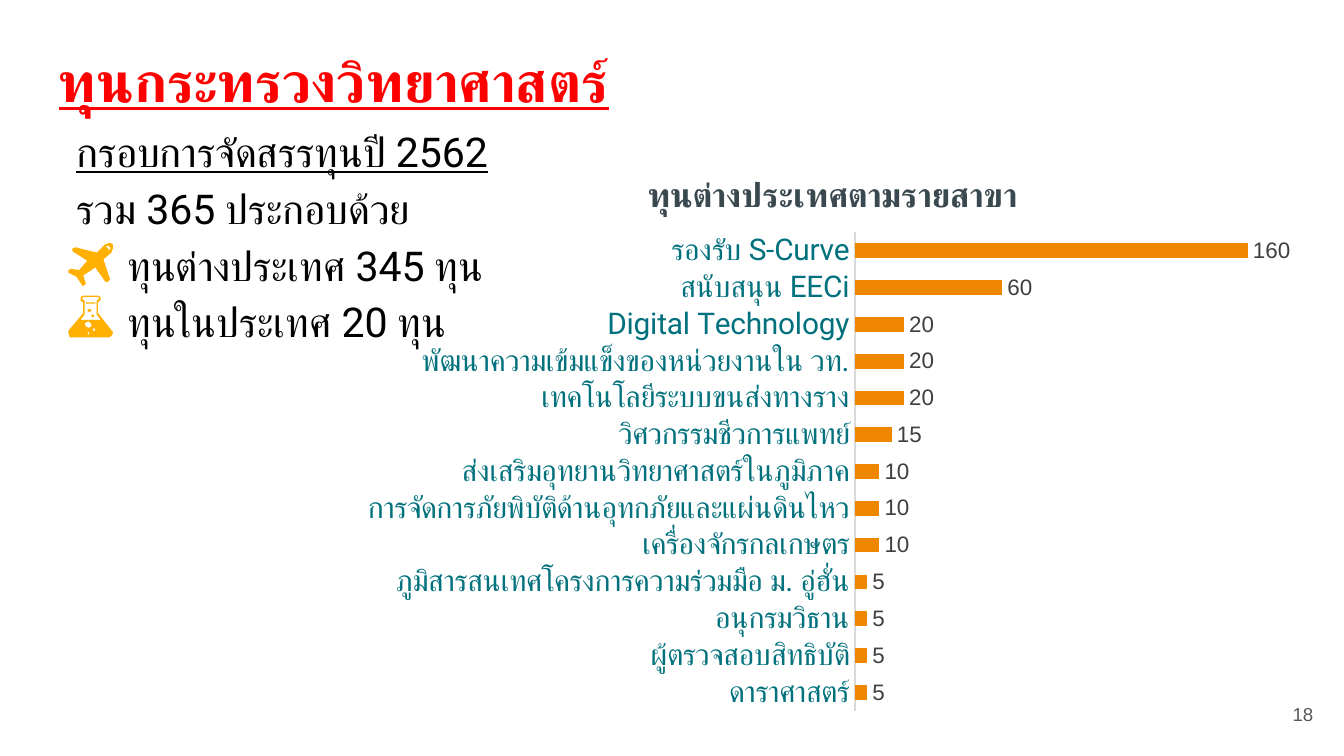
from pptx import Presentation
from pptx.util import Inches, Pt
from pptx.dml.color import RGBColor
from pptx.chart.data import CategoryChartData
from pptx.enum.chart import XL_CHART_TYPE as Kind, XL_LABEL_POSITION as Spot, XL_TICK_MARK as Tick
from pptx.enum.shapes import MSO_SHAPE as Preset
from pptx.enum.text import MSO_ANCHOR as Anchor, PP_ALIGN as Align
from pptx.oxml import parse_xml
from lxml import etree

DRAW = "http://schemas.openxmlformats.org/drawingml/2006/main"
GOLD = "FFB000"


def style(font, size, color, name="Roboto", bold=False):
    font.size, font.bold, font.name = Pt(size), bold, name
    font.color.rgb = RGBColor.from_string(color)
    etree.SubElement(font._rPr, f"{{{DRAW}}}cs", typeface=name)


def paint(shape, color):
    shape.shadow.inherit = False
    shape.fill.solid()
    shape.fill.fore_color.rgb = RGBColor.from_string(color)
    shape.line.fill.background()


prs = Presentation()
prs.slide_width = Inches(10)
prs.slide_height = prs.slide_width * 9 // 16
slide = prs.slides.add_slide(prs.slide_layouts[6])
shapes = slide.shapes

boxes = []
for x, y, w, h in [(0.34, 0.25, 9.32, 0.63), (0.34, 0.79, 9.32, 3.74), (9.27, 5.1, 0.6, 0.43)]:
    frame = shapes.add_textbox(Inches(x), Inches(y), Inches(w), Inches(h)).text_frame
    frame.word_wrap = True
    frame.margin_left = frame.margin_right = frame.margin_top = frame.margin_bottom = Inches(0.1)
    boxes.append(frame)
title, body, page = boxes

head = title.paragraphs[0]
head.text = "ทุนกระทรวงวิทยาศาสตร์"
style(head.font, 30, "FF0000", bold=True)
head.font.underline = True

lines = [
    ("กรอบการจัดสรรทุนปี 2562", 0.13),
    ("รวม 365 ประกอบด้วย", 0.13),
    ("ทุนต่างประเทศ 345 ทุน", 0.51),
    ("ทุนในประเทศ 20 ทุน", 0.51),
]
for i, (text, left) in enumerate(lines):
    para = body.add_paragraph() if i else body.paragraphs[0]
    para.text = text
    para.line_spacing = 1.15
    para._p.get_or_add_pPr().set("marL", str(Inches(left)))
    style(para.font, 22, "000000")
    para.font.underline = i == 0

page.vertical_anchor = Anchor.MIDDLE
num = page.paragraphs[0]
num.text = "18"
num.alignment = Align.RIGHT
style(num.font, 10, "595959", "Arial")

fields = [
    ("ดาราศาสตร์", 5),
    ("ผู้ตรวจสอบสิทธิบัติ", 5),
    ("อนุกรมวิธาน", 5),
    ("ภูมิสารสนเทศโครงการความร่วมมือ ม. อู่ฮั่น", 5),
    ("เครื่องจักรกลเกษตร", 10),
    ("การจัดการภัยพิบัติด้านอุทกภัยและแผ่นดินไหว", 10),
    ("ส่งเสริมอุทยานวิทยาศาสตร์ในภูมิภาค", 10),
    ("วิศวกรรมชีวการแพทย์", 15),
    ("เทคโนโลยีระบบขนส่งทางราง", 20),
    ("พัฒนาความเข้มแข็งของหน่วยงานใน วท.", 20),
    ("Digital Technology", 20),
    ("สนับสนุน EECi", 60),
    ("รองรับ S-Curve", 160),
]
data = CategoryChartData()
data.categories = [name for name, count in fields]
data.add_series("Series 1", [count for name, count in fields])
wide, high = 7.21, 4.28
chart = shapes.add_chart(
    Kind.BAR_CLUSTERED, Inches(2.59), Inches(1.1), Inches(wide), Inches(high), data
).chart
style(chart.font, 10, "000000", "Arial")
chart.has_legend = False
chart.has_title = True
label = chart.chart_title.text_frame.paragraphs[0]
label.text = "ทุนต่างประเทศตามรายสาขา"
style(label.font, 18, "3A4950", bold=True)

axis = chart.category_axis
axis.major_tick_mark = axis.minor_tick_mark = Tick.NONE
axis.format.line.color.rgb = RGBColor.from_string("D9D9D9")
axis.format.line.width = Pt(1)
style(axis.tick_labels.font, 16, "00717D")
scale = chart.value_axis
scale.minimum_scale, scale.maximum_scale = 0, 180
scale.has_major_gridlines = False
scale.visible = False

plot = chart.plots[0]
plot.gap_width, plot.overlap = 150, -25
plot.vary_by_categories = False
fill = plot.series[0].format.fill
fill.solid()
fill.fore_color.rgb = RGBColor.from_string("EF8600")
plot.has_data_labels = True
marks = plot.data_labels
marks.show_value = True
marks.position = Spot.OUTSIDE_END
style(marks.font, 12, "404040", "Arial")

area = chart._chartSpace.chart.plotArea
for old in area.findall("{*}layout"):
    area.remove(old)
area.insert(0, parse_xml(
    '<c:layout xmlns:c="http://schemas.openxmlformats.org/drawingml/2006/chart"><c:manualLayout>'
    '<c:layoutTarget val="inner"/><c:xMode val="edge"/><c:yMode val="edge"/>'
    f'<c:x val="{3.77 / wide}"/><c:y val="{0.63 / high}"/>'
    f'<c:w val="{3.29 / wide}"/><c:h val="{3.56 / high}"/>'
    '</c:manualLayout></c:layout>'))

plane = [
    [(81, 181), (78, 182), (72, 188), (56, 184), (54, 185), (54, 187), (65, 194), (59, 201),
     (53, 200), (51, 201), (51, 203), (57, 206), (61, 212), (62, 213), (64, 211), (62, 205),
     (71, 199), (78, 209), (79, 210), (80, 210), (82, 208), (77, 193), (83, 188), (84, 185),
     (84, 182), (83, 181)],
    [(79, 183), (81, 183), (82, 184), (82, 186), (81, 186), (80, 184), (79, 184)],
]
flask = [
    [(62, 220), (60, 221), (60, 224), (62, 225), (62, 233), (51, 246), (51, 248), (52, 251),
     (54, 251), (81, 251), (83, 250), (84, 248), (84, 247), (73, 233), (73, 225), (75, 223),
     (75, 221), (73, 220)],
    [(73, 221), (74, 222), (72, 224), (72, 234), (75, 238), (60, 238), (63, 234), (63, 224),
     (61, 222), (62, 221)],
    [(66, 239), (68, 241), (68, 243), (66, 244), (64, 243), (63, 241), (64, 240)],
    [(70, 244), (71, 245), (70, 247), (69, 245)],
    [(66, 247), (67, 248), (66, 249), (65, 248)],
]
for icon in (plane, flask):
    pen = shapes.build_freeform(*icon[0][0], scale=Inches(0.01))
    pen.add_line_segments(icon[0][1:])
    for hole in icon[1:]:
        pen.move_to(*hole[0])
        pen.add_line_segments(hole[1:])
    paint(pen.convert_to_shape(), GOLD)

for form, x, y, w, h in [
    (Preset.OVAL, 0.68, 2.34, 0.02, 0.02),
    (Preset.ROUNDED_RECTANGLE, 0.64, 2.25, 0.07, 0.01),
    (Preset.OVAL, 0.65, 2.3, 0.03, 0.02),
]:
    paint(shapes.add_shape(form, Inches(x), Inches(y), Inches(w), Inches(h)), GOLD)

prs.save("out.pptx")
